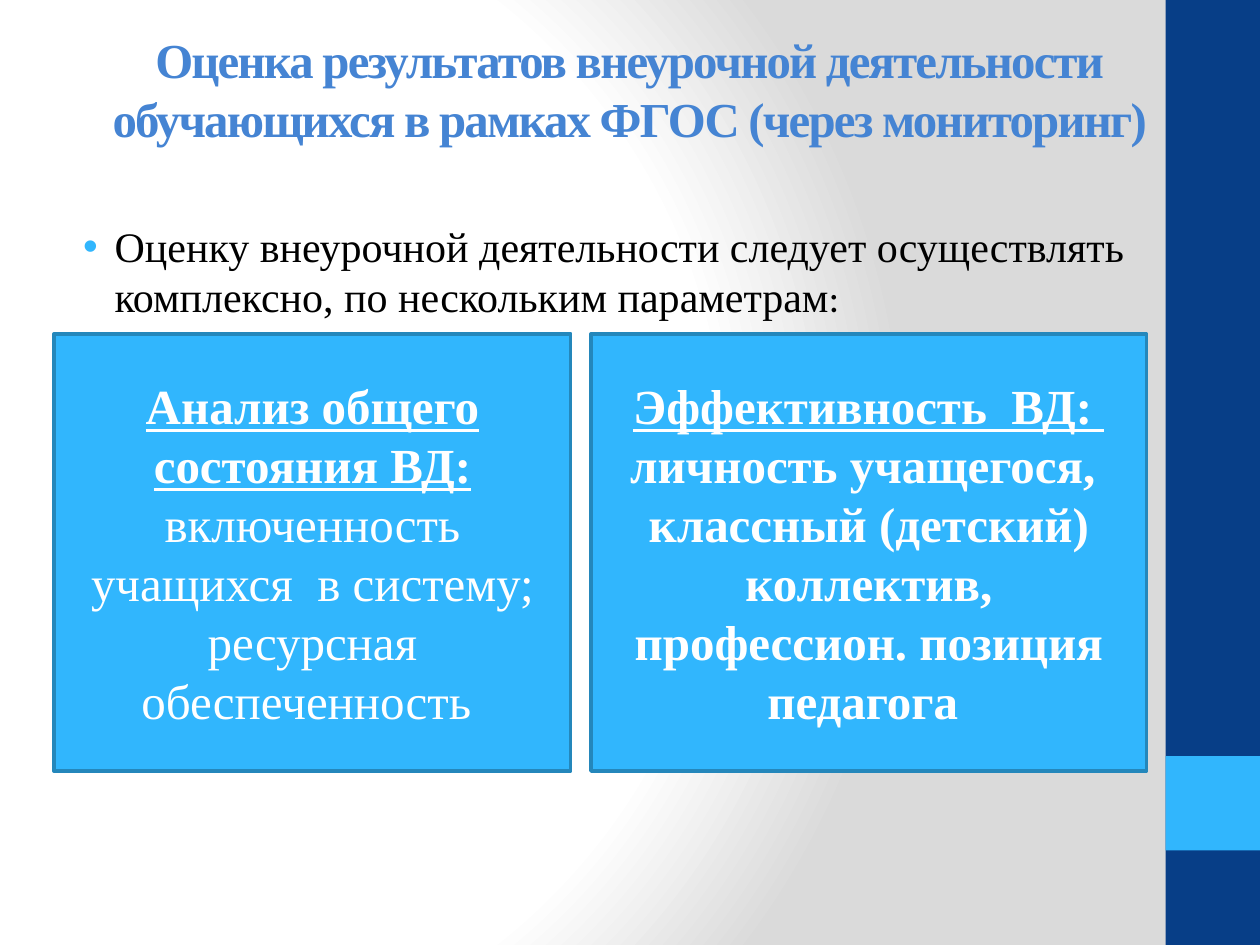
from pptx import Presentation
from pptx import util as u
from pptx.dml.color import RGBColor
from pptx.enum import shapes, text
from pptx.oxml import ns, parse_xml

COLORS = {"navy": "073E87", "sky": "31B6FD", "edge": "2487BB", "title": "4584D3",
          "text": "000000", "white": "FFFFFF", "grey": "DADADA"}
SERIF = "Times New Roman"


class SlideBuilder:
    """Holds the style and the current slide."""

    def __init__(self, presentation):
        self.slide = presentation.slides.add_slide(presentation.slide_layouts[1])

    def color(self, name):
        return RGBColor.from_string(COLORS[name])

    def background(self, stops):
        self.slide.background.fill.solid()
        solid = self.slide.element.find(".//" + ns.qn("a:solidFill"))
        stop_xml = "".join(f'<a:gs pos="{percent * 1000}"><a:srgbClr val="{COLORS[name]}"/></a:gs>'
                           for percent, name in stops)
        gradient = parse_xml(
            f'<a:gradFill {ns.nsdecls("a")} rotWithShape="1"><a:gsLst>{stop_xml}</a:gsLst>'
            '<a:path path="circle"><a:fillToRect l="20000" t="50000" r="100000" b="50000"/>'
            '</a:path></a:gradFill>')
        solid.getparent().replace(solid, gradient)

    def place(self, shape, left, top, width, height):
        shape.left, shape.top = u.Inches(left), u.Inches(top)
        shape.width, shape.height = u.Inches(width), u.Inches(height)

    def run(self, paragraph, words, size, color, bold=False, underline=False, font=SERIF):
        run = paragraph.add_run()
        run.text = words
        run.font.name, run.font.size = font, u.Pt(size)
        run.font.bold, run.font.underline = bold, underline
        run.font.color.rgb = self.color(color)
        return run

    def title(self, lines, *box):
        shape = self.slide.shapes.title
        self.place(shape, *box)
        frame = shape.text_frame
        frame.auto_size = text.MSO_AUTO_SIZE.NONE
        frame.vertical_anchor = text.MSO_ANCHOR.MIDDLE
        frame.margin_bottom = u.Inches(0.71)
        paragraph = frame.paragraphs[0]
        paragraph.alignment = text.PP_ALIGN.CENTER
        for index, line in enumerate(lines):
            if index:
                paragraph.add_line_break()
            run = self.run(paragraph, line, 27.9, "title", bold=True)
            run.font._element.set("spc", "-100")

    def bullet(self, runs, *box):
        shape = self.slide.placeholders[1]
        self.place(shape, *box)
        shape.text_frame.auto_size = text.MSO_AUTO_SIZE.NONE
        paragraph = shape.text_frame.paragraphs[0]
        properties = paragraph._p.get_or_add_pPr()
        properties.set("marL", str(u.Inches(0.38)))
        properties.set("indent", str(u.Inches(-0.25)))
        for xml in (f'<a:buClr {ns.nsdecls("a")}><a:srgbClr val="{COLORS["sky"]}"/></a:buClr>',
                    f'<a:buChar {ns.nsdecls("a")} char="•"/>'):
            properties.append(parse_xml(xml))
        for words, size, font in runs:
            self.run(paragraph, words, size, "text", font=font)

    def rectangle(self, fill, *box, edge=None):
        shape = self.slide.shapes.add_shape(shapes.MSO_SHAPE.RECTANGLE, 0, 0, 0, 0)
        self.place(shape, *box)
        shape.shadow.inherit = False
        shape.fill.solid()
        shape.fill.fore_color.rgb = self.color(fill)
        if edge:
            shape.line.color.rgb = self.color(edge)
            shape.line.width = u.Pt(2)
        else:
            shape.line.fill.background()
        return shape

    def card(self, paragraphs, *box):
        frame = self.rectangle("sky", *box, edge="edge").text_frame
        frame.word_wrap = True
        frame.vertical_anchor = text.MSO_ANCHOR.MIDDLE
        for index, runs in enumerate(paragraphs):
            paragraph = frame.add_paragraph() if index else frame.paragraphs[0]
            paragraph.alignment = text.PP_ALIGN.CENTER
            for words, bold, underline in runs:
                self.run(paragraph, words, 28, "white", bold, underline)


def main():
    presentation = Presentation()
    presentation.slide_width, presentation.slide_height = u.Inches(10), u.Inches(7.5)
    builder = SlideBuilder(presentation)
    builder.background([(0, "white"), (75, "white"), (100, "grey")])
    builder.rectangle("navy", 9.25, 0, 0.75, 7.5)
    builder.rectangle("sky", 9.25, 6, 0.75, 0.75)
    builder.bullet([("Оценку внеурочной деятельности следует осуществлять комплексно, "
                     "по нескольким параметрам", 24, SERIF), (":", 22, "Calibri")],
                   0.43, 1.7, 9, 4.95)
    builder.title(["Оценка результатов внеурочной деятельности",
                   "обучающихся в рамках ФГОС (через мониторинг)"], 0.5, 0.52, 9, 1.02)
    builder.card([[("Анализ общего состояния ВД: ", True, True),
                   ("включенность учащихся  в систему; ресурсная обеспеченность ", False, False)]],
                 0.43, 2.65, 4.1, 3.47)
    builder.card([[("Эффективность  ВД: ", True, True)],
                  [("личность учащегося, ", True, False)],
                  [("классный (детский) коллектив, профессион. позиция педагога ", True, False)]],
                 4.69, 2.65, 4.41, 3.47)
    presentation.save("out.pptx")


if __name__ == "__main__":
    main()
